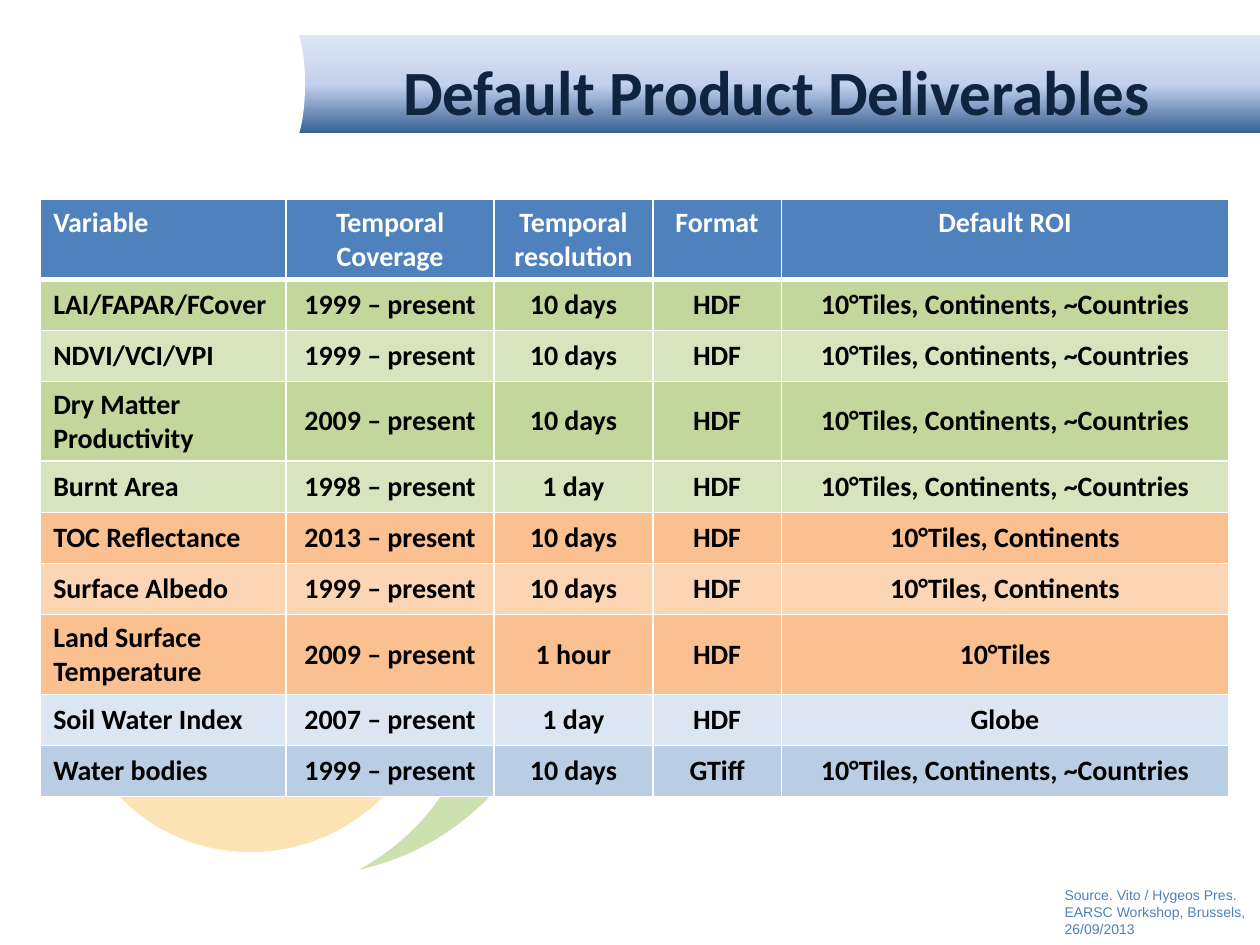
"""Build the slide of default product deliverables."""
import pptx
import pptx.util
import pptx.oxml
import pptx.oxml.ns
import pptx.dml.color
import pptx.enum.shapes
import pptx.enum.text

Cm, Pt = pptx.util.Cm, pptx.util.Pt
RGB = pptx.dml.color.RGBColor.from_string
KIND = pptx.enum.shapes.MSO_SHAPE
ALIGN = pptx.enum.text.PP_ALIGN
MID = pptx.enum.text.MSO_ANCHOR.MIDDLE
TOP = pptx.enum.text.MSO_ANCHOR.TOP
FIT = pptx.enum.text.MSO_AUTO_SIZE.SHAPE_TO_FIT_TEXT
SPACE = pptx.oxml.ns.nsdecls("a")

TITLE = "Default Product Deliverables"
HEADS = ["Variable", "Temporal Coverage", "Temporal resolution", "Format", "Default ROI"]
TILES = "10°Tiles"
LANDS = TILES + ", Continents"
ALL = LANDS + ", ~Countries"
ROWS = [
    ("green", "LAI/FAPAR/FCover", 1999, "10 days", "HDF", ALL),
    ("lime", "NDVI/VCI/VPI", 1999, "10 days", "HDF", ALL),
    ("green", "Dry Matter Productivity", 2009, "10 days", "HDF", ALL),
    ("lime", "Burnt Area", 1998, "1 day", "HDF", ALL),
    ("orange", "TOC Reflectance", 2013, "10 days", "HDF", LANDS),
    ("peach", "Surface Albedo", 1999, "10 days", "HDF", LANDS),
    ("orange", "Land Surface Temperature", 2009, "1 hour", "HDF", TILES),
    ("pale", "Soil Water Index", 2007, "1 day", "HDF", "Globe"),
    ("blue", "Water bodies", 1999, "10 days", "GTiff", ALL),
]
SOURCE = ["Source. Vito / Hygeos Pres.", "EARSC Workshop, Brussels,", "26/09/2013"]
WIDTHS = [4.95, 4.19, 3.2, 2.59, 9.02]
RINGS = [
    ((1.17, 7.65, 10.16, 9.96), "leaf", 40),
    ((0.43, 8.94, 9.32, 9.12), "white", 100),
    ((1.4, 9.86, 7.44, 7.29), "sun", 40),
]
THEME = {
    "fills": {
        "green": "C3D69B", "lime": "D7E4BD", "orange": "FAC090", "peach": "FCD5B5",
        "pale": "DCE6F2", "blue": "B9CDE5", "head": "4F81BD", "white": "FFFFFF",
        "leaf": "84B238", "sun": "F9B945",
    },
    "fade": [(0, "376092"), (50, "C2D1ED"), (100, "DCE6F2")],
    "title": {"name": "Calibri", "size": Pt(36), "bold": True, "color": "0F243E"},
    "head": {"name": "Calibri", "size": Pt(16), "bold": True, "color": "FFFFFF"},
    "body": {"name": "Calibri", "size": Pt(16), "bold": True, "color": "000000"},
    "source": {"name": "Arial", "size": Pt(8), "bold": False, "color": "4F81BD"},
}


def style(font, form):
    for key, value in form.items():
        if key == "color":
            font.color.rgb = RGB(value)
        else:
            setattr(font, key, value)


def write(frame, lines, form, align=ALIGN.LEFT):
    for num, line in enumerate(lines):
        para = frame.add_paragraph() if num else frame.paragraphs[0]
        para.alignment = align
        run = para.add_run()
        run.text = line
        style(run.font, form)


def draw(slide, kind, box):
    shape = slide.shapes.add_shape(kind, *map(Cm, box))
    shape.shadow.inherit = False
    shape.line.fill.background()
    return shape


def paint(shape, hue, alpha=100):
    shape.fill.solid()
    shape.fill.fore_color.rgb = RGB(THEME["fills"][hue])
    if alpha < 100:
        tint = shape._element.spPr.find(".//" + pptx.oxml.ns.qn("a:srgbClr"))
        tint.append(pptx.oxml.parse_xml(f'<a:alpha {SPACE} val="{alpha * 1000}"/>'))


def fade(shape):
    stops = "".join(
        f'<a:gs pos="{pos * 1000}"><a:srgbClr val="{hue}"/></a:gs>'
        for pos, hue in THEME["fade"])
    shape._element.spPr.insert(2, pptx.oxml.parse_xml(
        f'<a:gradFill {SPACE} rotWithShape="1"><a:gsLst>{stops}</a:gsLst>'
        '<a:lin ang="16200000" scaled="0"/></a:gradFill>'))


def edge(cell, row):
    wide = {"L": 1, "R": 1, "T": 3 if row == 1 else 1, "B": 1 if row else 3}
    for num, (side, size) in enumerate(wide.items()):
        cell._tc.get_or_add_tcPr().insert(num, pptx.oxml.parse_xml(
            f'<a:ln{side} {SPACE} w="{int(Pt(size))}"><a:solidFill>'
            f'<a:srgbClr val="{THEME["fills"]["white"]}"/></a:solidFill></a:ln{side}>'))


def fill_table(slide):
    rows = [("head", *HEADS)]
    rows += [(hue, name, f"{year} – present", *rest) for hue, name, year, *rest in ROWS]
    frame = slide.shapes.add_table(
        len(rows), len(HEADS), Cm(0.82), Cm(4.02), Cm(sum(WIDTHS)), Cm(12.04))
    table = frame.table
    table.horz_banding = False
    for col, width in zip(table.columns, WIDTHS):
        col.width = Cm(width)
    for row, (hue, *texts) in enumerate(rows):
        table.rows[row].height = Cm(1.03)
        for col, text in enumerate(texts):
            cell = table.cell(row, col)
            cell.vertical_anchor = MID if row else TOP
            paint(cell, hue)
            edge(cell, row)
            write(cell.text_frame, [text], THEME["body" if row else "head"],
                  ALIGN.CENTER if col else ALIGN.LEFT)
    frame.height = Cm(12.04)


def add_text(slide, box, lines, form, align, look):
    frame = slide.shapes.add_textbox(*map(Cm, box)).text_frame
    for key, value in look.items():
        setattr(frame, key, value)
    write(frame, lines, form, align)


def main():
    deck = pptx.Presentation()
    deck.slide_width, deck.slide_height = Cm(25.4), Cm(19.05)
    slide = deck.slides.add_slide(deck.slide_layouts[6])
    fade(draw(slide, KIND.RECTANGLE, (5.82, 0.71, 19.58, 1.98)))
    paint(draw(slide, KIND.OVAL, (5.51, 0.43, 0.64, 2.54)), "white")
    for box, hue, alpha in RINGS:
        ring = draw(slide, KIND.OVAL, box)
        ring.rotation = 142.6
        paint(ring, hue, alpha)
    add_text(slide, (6.55, 0.84, 18.21, 1.47), [TITLE], THEME["title"], ALIGN.CENTER,
             {"word_wrap": True, "vertical_anchor": MID,
              "margin_top": Cm(0.5), "margin_bottom": 0})
    fill_table(slide)
    add_text(slide, (21.21, 17.75, 4.19, 1.3), SOURCE, THEME["source"], ALIGN.LEFT,
             {"word_wrap": False, "auto_size": FIT})
    deck.save("out.pptx")


if __name__ == "__main__":
    main()
